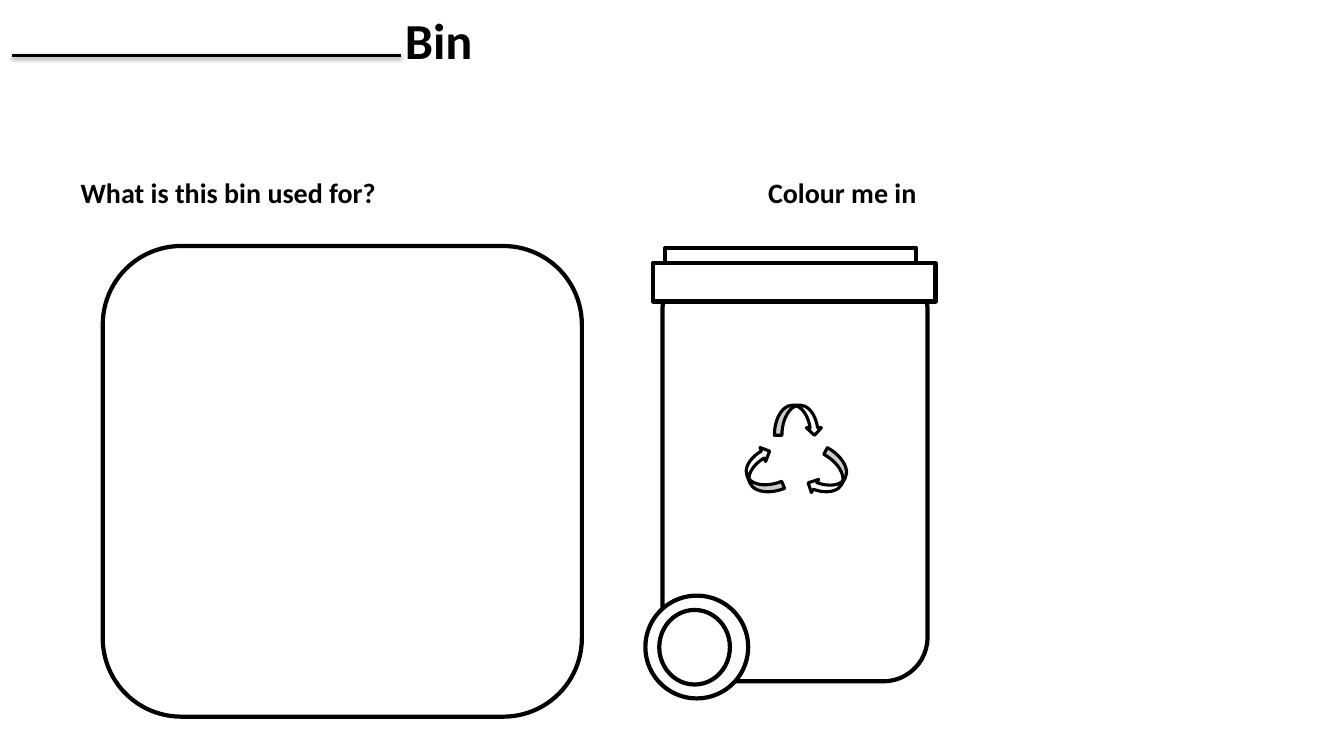
from dataclasses import dataclass

import pptx
import pptx.dml.color
import pptx.enum.shapes
import pptx.enum.text
import pptx.oxml
import pptx.oxml.ns
import pptx.util
from pptx.util import Cm

KIND = pptx.enum.shapes.MSO_SHAPE


@dataclass(frozen=True)
class Theme:
    ink: str = "000000"
    paper: str = "FFFFFF"
    font: str = "Calibri"
    title: float = 36
    label: float = 20
    outline: float = 3
    thin: float = 2.25


THEME = Theme()


def rgb(value):
    return pptx.dml.color.RGBColor.from_string(value)


def add_outline(shapes, kind, left, top, width, height,
                fill=THEME.paper, weight=THEME.outline, rotation=0):
    """Add a black-outlined preset shape; lengths are in centimetres."""
    shape = shapes.add_shape(kind, Cm(left), Cm(top), Cm(width), Cm(height))
    shape.shadow.inherit = False
    shape.rotation = rotation
    if fill:
        shape.fill.solid()
        shape.fill.fore_color.rgb = rgb(fill)
    else:
        shape.fill.background()
    shape.line.color.rgb = rgb(THEME.ink)
    shape.line.width = pptx.util.Pt(weight)
    return shape


def add_text(shapes, text, left, top, width, height, size=THEME.label,
             bold=True, color=THEME.ink):
    box = shapes.add_textbox(Cm(left), Cm(top), Cm(width), Cm(height))
    frame = box.text_frame
    frame.word_wrap = False
    frame.vertical_anchor = pptx.enum.text.MSO_ANCHOR.TOP
    frame.margin_left = frame.margin_right = 0
    frame.margin_top = frame.margin_bottom = 0
    span = frame.paragraphs[0].add_run()
    span.text = text
    span.font.name = THEME.font
    span.font.size = pptx.util.Pt(size)
    span.font.bold = bold
    span.font.color.rgb = rgb(color)
    return box


def add_name_line(shapes, left, right, y):
    """Add the writing line with its soft shadow below."""
    line = shapes.add_connector(pptx.enum.shapes.MSO_CONNECTOR.STRAIGHT,
                                Cm(left), Cm(y), Cm(right), Cm(y))
    line.line.color.rgb = rgb(THEME.ink)
    line.line.width = pptx.util.Pt(THEME.thin)
    line._element.spPr.append(pptx.oxml.parse_xml(
        f'<a:effectLst {pptx.oxml.ns.nsdecls("a")}>'
        '<a:outerShdw blurRad="40000" dist="20000" dir="5400000" rotWithShape="0">'
        f'<a:srgbClr val="{THEME.ink}"><a:alpha val="38000"/></a:srgbClr>'
        '</a:outerShdw></a:effectLst>'))


def add_bin(shapes):
    parts = shapes.add_group_shape().shapes
    # Body
    add_outline(parts, KIND.ROUNDED_RECTANGLE, 16.69, 6.68, 6.68, 10.49, fill=None)
    # Recycling arrows
    for left, top, rotation in ((19.51, 10.21, 0), (20.29, 11.61, 118.7),
                                (18.59, 11.51, 248.1)):
        add_outline(parts, KIND.CURVED_DOWN_ARROW, left, top, 1.2, 0.76,
                    weight=THEME.thin, rotation=rotation)
    # Lid, wheel, hub and lid top
    add_outline(parts, KIND.RECTANGLE, 16.46, 6.63, 7.11, 0.97)
    add_outline(parts, KIND.FLOWCHART_CONNECTOR, 16.26, 15.01, 2.59, 2.59)
    add_outline(parts, KIND.FLOWCHART_CONNECTOR, 16.61, 15.37, 1.78, 1.88)
    add_outline(parts, KIND.RECTANGLE, 16.76, 6.25, 6.32, 0.38)


def main():
    deck = pptx.Presentation()
    deck.slide_width, deck.slide_height = Cm(33.86), Cm(19.05)
    page = deck.slides.add_slide(deck.slide_layouts[6])
    shapes = page.shapes

    # Drawing and answer area
    add_bin(shapes)
    add_outline(shapes, KIND.ROUNDED_RECTANGLE, 2.59, 6.2, 12.07, 11.86)

    # Title with a gap to fill in
    add_name_line(shapes, 0.3, 10.11, 1.4)
    add_text(shapes, "Bin", 10.2, 0.23, 1.8, 1.55, size=THEME.title)

    # Section labels
    for text, left, width in (("What is this bin used for?", 2.03, 7.5),
                              ("Colour me in", 19.35, 3.8)):
        add_text(shapes, text, left, 4.42, width, 0.86)

    deck.save("out.pptx")


if __name__ == "__main__":
    main()
